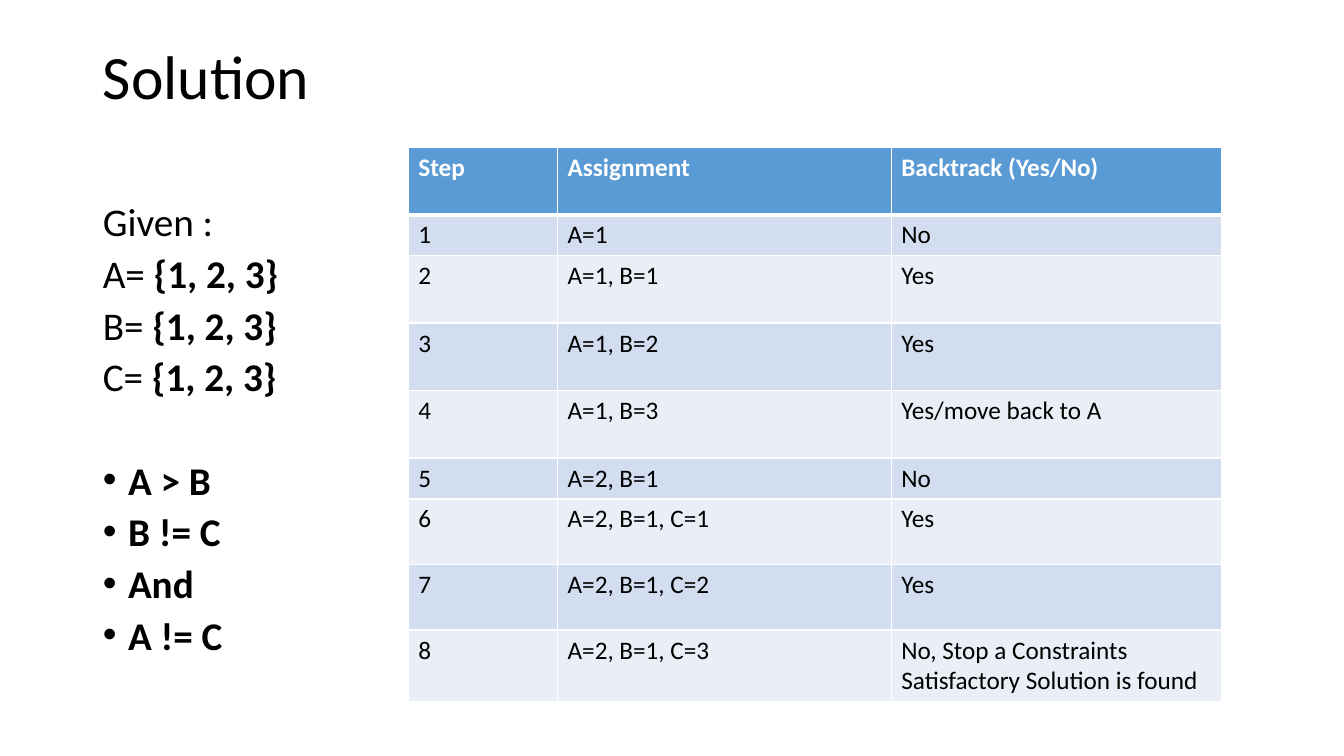
from lxml.etree import SubElement
from pptx import Presentation
from pptx.dml.color import RGBColor
from pptx.enum.text import MSO_ANCHOR, MSO_AUTO_SIZE, PP_ALIGN
from pptx.oxml.ns import qn
from pptx.util import Inches, Pt

FONT = "Calibri"
COLORS = {
    "text": "000000",
    "header_text": "FFFFFF",
    "border": "FFFFFF",
    "header": "5B9BD5",
    "odd": "D2DEEF",
    "even": "EAEFF7",
}
DOMAINS = [("A= ", "{1, 2, 3}"), ("B= ", "{1, 2, 3}"), ("C= ", "{1, 2, 3}")]
CONSTRAINTS = ["A > B", "B != C", "And", "A != C"]
HEADINGS = ["Step", "Assignment", "Backtrack (Yes/No)"]
STEPS = [
    ("A=1", "No"),
    ("A=1, B=1", "Yes"),
    ("A=1, B=2", "Yes"),
    ("A=1, B=3", "Yes/move back to A"),
    ("A=2, B=1", "No"),
    ("A=2, B=1, C=1", "Yes"),
    ("A=2, B=1, C=2", "Yes"),
    ("A=2, B=1, C=3", "No, Stop a Constraints Satisfactory Solution is found"),
]
COLUMN_WIDTHS = [1.48, 3.31, 3.28]
ROW_HEIGHTS = [0.67, 0.39, 0.67, 0.67, 0.67, 0.39, 0.65, 0.65, 0.65]


def add_run(paragraph, text, size, color="text", bold=False):
    run = paragraph.add_run()
    run.text = text
    run.font.name = FONT
    run.font.size = Pt(size)
    run.font.bold = bold
    run.font.color.rgb = RGBColor.from_string(COLORS[color])


def place(shape, box):
    shape.left, shape.top, shape.width, shape.height = map(Inches, box)
    shape.text_frame.word_wrap = True
    shape.text_frame.auto_size = MSO_AUTO_SIZE.NONE


def fill_title(title, box):
    place(title, box)
    title.text_frame.vertical_anchor = MSO_ANCHOR.MIDDLE
    heading = title.text_frame.paragraphs[0]
    heading.alignment = PP_ALIGN.LEFT
    heading.line_spacing = 0.9
    add_run(heading, "Solution", 44)


def format_line(paragraph, bulleted, space_before):
    paragraph.alignment = PP_ALIGN.LEFT
    paragraph.line_spacing = 0.8
    paragraph.space_before = Pt(space_before)
    properties = paragraph._p.get_or_add_pPr()
    indent = Inches(0.25) if bulleted else 0
    properties.set("marL", str(indent))
    properties.set("indent", str(-indent))
    if bulleted:
        SubElement(properties, qn("a:buFont")).set("typeface", "Arial")
        SubElement(properties, qn("a:buChar")).set("char", "•")
    else:
        SubElement(properties, qn("a:buNone"))


def fill_problem(body, box):
    """Write the variable domains, then the bulleted constraints."""
    place(body, box)
    frame = body.text_frame
    frame.vertical_anchor = MSO_ANCHOR.TOP
    given = frame.paragraphs[0]
    format_line(given, False, 10)
    add_run(given, "Given :", 28)
    for variable, domain in DOMAINS:
        line = frame.add_paragraph()
        format_line(line, False, 10)
        add_run(line, variable, 28)
        add_run(line, domain, 28, bold=True)
    for index, constraint in enumerate(CONSTRAINTS):
        line = frame.add_paragraph()
        format_line(line, True, 10 if index else 47)
        add_run(line, constraint, 28, bold=True)


def set_borders(cell, bottom_width):
    properties = cell._tc.get_or_add_tcPr()
    for side, width in (("L", 1), ("R", 1), ("T", 1), ("B", bottom_width)):
        border = SubElement(properties, qn(f"a:ln{side}"), w=str(Pt(width)))
        fill = SubElement(border, qn("a:solidFill"))
        SubElement(fill, qn("a:srgbClr")).set("val", COLORS["border"])


def add_steps_table(slide, box):
    rows = [HEADINGS] + [(str(n), *step) for n, step in enumerate(STEPS, 1)]
    frame = slide.shapes.add_table(len(rows), len(HEADINGS), *map(Inches, box))
    table = frame.table
    for column, width in zip(table.columns, COLUMN_WIDTHS):
        column.width = Inches(width)
    for row, height in zip(table.rows, ROW_HEIGHTS):
        row.height = Inches(height)
    for r, texts in enumerate(rows):
        is_header = r == 0
        shade = "header" if is_header else "odd" if r % 2 else "even"
        for c, text in enumerate(texts):
            cell = table.cell(r, c)
            set_borders(cell, 3 if is_header else 1)
            cell.fill.solid()
            cell.fill.fore_color.rgb = RGBColor.from_string(COLORS[shade])
            add_run(cell.text_frame.paragraphs[0], text, 18,
                    "header_text" if is_header else "text", is_header)


def main():
    deck = Presentation()
    deck.slide_width, deck.slide_height = Inches(13.33), Inches(7.5)
    slide = deck.slides.add_slide(deck.slide_layouts[1])
    fill_title(slide.shapes.title, (0.92, 0.4, 11.5, 0.77))
    fill_problem(slide.placeholders[1], (0.92, 2, 11.5, 4.76))
    add_steps_table(slide, (4.05, 1.46, 8.06, 5.49))
    deck.save("out.pptx")


if __name__ == "__main__":
    main()
